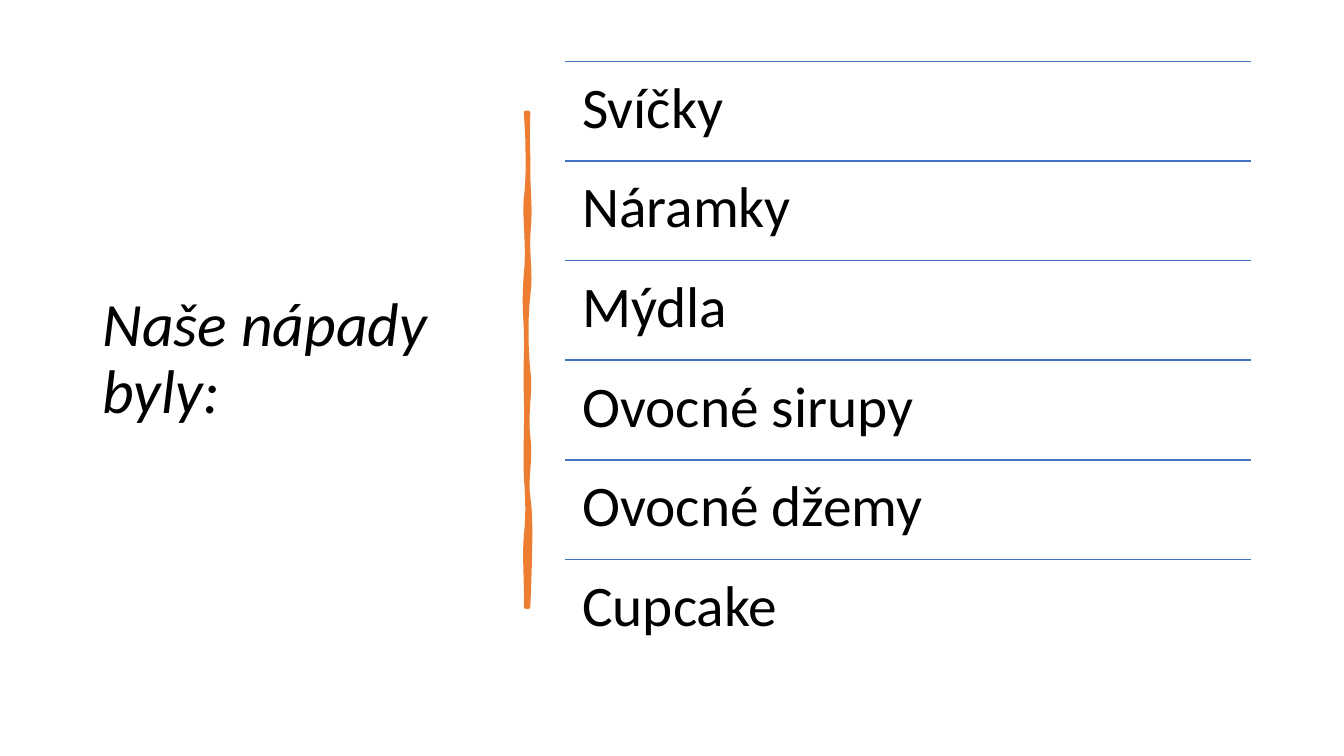
from lxml.etree import SubElement
from pptx import Presentation
from pptx.dml.color import RGBColor
from pptx.enum.shapes import MSO_CONNECTOR
from pptx.enum.text import MSO_ANCHOR, MSO_AUTO_SIZE, PP_ALIGN
from pptx.oxml.ns import qn
from pptx.util import Pt

COLORS = {"text": "000000", "brush": "ED7D31", "rule": "4472C4"}
FONT = "Calibri"
IDEAS = ["Svíčky", "Náramky", "Mýdla", "Ovocné sirupy", "Ovocné džemy", "Cupcake"]

# Bezier points of the brush stroke, relative to its top left corner:
# a start, then two control points and an end for each curve.
RIGHT_EDGE = [
    (1.4, 0), (0.7, 21.6), (1.4, 26.6), (1.4, 46.8),
    (2.2, 67.7), (2.9, 68.4), (1.4, 87.1), (0.7, 105.8), (3.6, 113), (1.4, 130.3),
    (-0.7, 147.6), (0, 171.4), (1.4, 184.3), (3.6, 197.3), (-0.7, 214.6), (1.4, 231.1),
    (3.6, 247.7), (-0.7, 262.1), (1.4, 274.3), (3.6, 287.3), (2.9, 316.1), (1.4, 352.8),
]
LEFT_EDGE = [
    (0, 352.8), (0.7, 339.8), (-1.4, 317.5), (0, 302.4),
    (1.4, 288), (1.4, 279.4), (0, 259.2), (-0.7, 239), (0.7, 223.2), (0, 201.6),
    (-0.7, 180.7), (0.7, 169.2), (0, 154.8), (-0.7, 140.4), (-1.4, 133.2), (0, 115.2),
    (2.2, 97.2), (-1.4, 72), (0, 61.2), (1.4, 50.4), (2.2, 28.8), (0, 0),
]


def rgb(name):
    return RGBColor.from_string(COLORS[name])


def write_text(shape, text, size, italic=False, anchor=MSO_ANCHOR.TOP, inset=None):
    frame = shape.text_frame
    frame.word_wrap = True
    frame.auto_size = MSO_AUTO_SIZE.NONE
    frame.vertical_anchor = anchor
    if inset is not None:
        frame.margin_left = frame.margin_right = Pt(inset)
        frame.margin_top = frame.margin_bottom = Pt(inset)
    paragraph = frame.paragraphs[0]
    paragraph.alignment = PP_ALIGN.LEFT
    paragraph.line_spacing = 0.9
    run = paragraph.add_run()
    run.text = text
    run.font.name = FONT
    run.font.size = Pt(size)
    run.font.italic = italic
    run.font.color.rgb = rgb("text")


def flatten(edge, steps=8):
    """Return points along the Bezier curves of an edge."""
    points = [edge[0]]
    for i in range(0, len(edge) - 1, 3):
        curve = edge[i:i + 4]
        for step in range(1, steps + 1):
            t = step / steps
            weights = ((1 - t) ** 3, 3 * t * (1 - t) ** 2, 3 * t * t * (1 - t), t ** 3)
            points.append(tuple(sum(w * point[axis] for w, point in zip(weights, curve))
                                for axis in (0, 1)))
    return points


def add_title(slide, left, top, width, height):
    title = slide.shapes.title
    title.left, title.top = Pt(left), Pt(top)
    title.width, title.height = Pt(width), Pt(height)
    write_text(title, "Naše nápady byly:", size=44, italic=True, anchor=MSO_ANCHOR.MIDDLE)


def add_brush_stroke(slide, left, top):
    outline = [(Pt(left + x), Pt(top + y))
               for x, y in flatten(RIGHT_EDGE) + flatten(LEFT_EDGE)]
    builder = slide.shapes.build_freeform(*outline[0])
    builder.add_line_segments(outline[1:], close=True)
    brush = builder.convert_to_shape()
    brush.shadow.inherit = False
    brush.fill.solid()
    brush.fill.fore_color.rgb = rgb("brush")
    brush.line.color.rgb = rgb("brush")
    brush.line.width = Pt(3.25)


def add_idea_list(slide, left, top, width, height):
    row_height = height / len(IDEAS)
    for row, idea in enumerate(IDEAS):
        y = top + row * row_height
        rule = slide.shapes.add_connector(
            MSO_CONNECTOR.STRAIGHT, Pt(left), Pt(y), Pt(left + width), Pt(y))
        rule.line.color.rgb = rgb("rule")
        rule.line.width = Pt(1)
        SubElement(rule._element.spPr, qn("a:effectLst"))
        box = slide.shapes.add_textbox(Pt(left), Pt(y), Pt(width), Pt(row_height))
        write_text(box, idea, size=41, inset=12.3)


def main():
    presentation = Presentation()
    presentation.slide_width, presentation.slide_height = Pt(960), Pt(540)
    slide = presentation.slides.add_slide(presentation.slide_layouts[5])
    add_title(slide, 66, 43, 284, 428)
    add_brush_stroke(slide, 375.8, 80.6)
    add_idea_list(slide, 403.6, 43.8, 490, 427)
    presentation.save("out.pptx")


if __name__ == "__main__":
    main()
